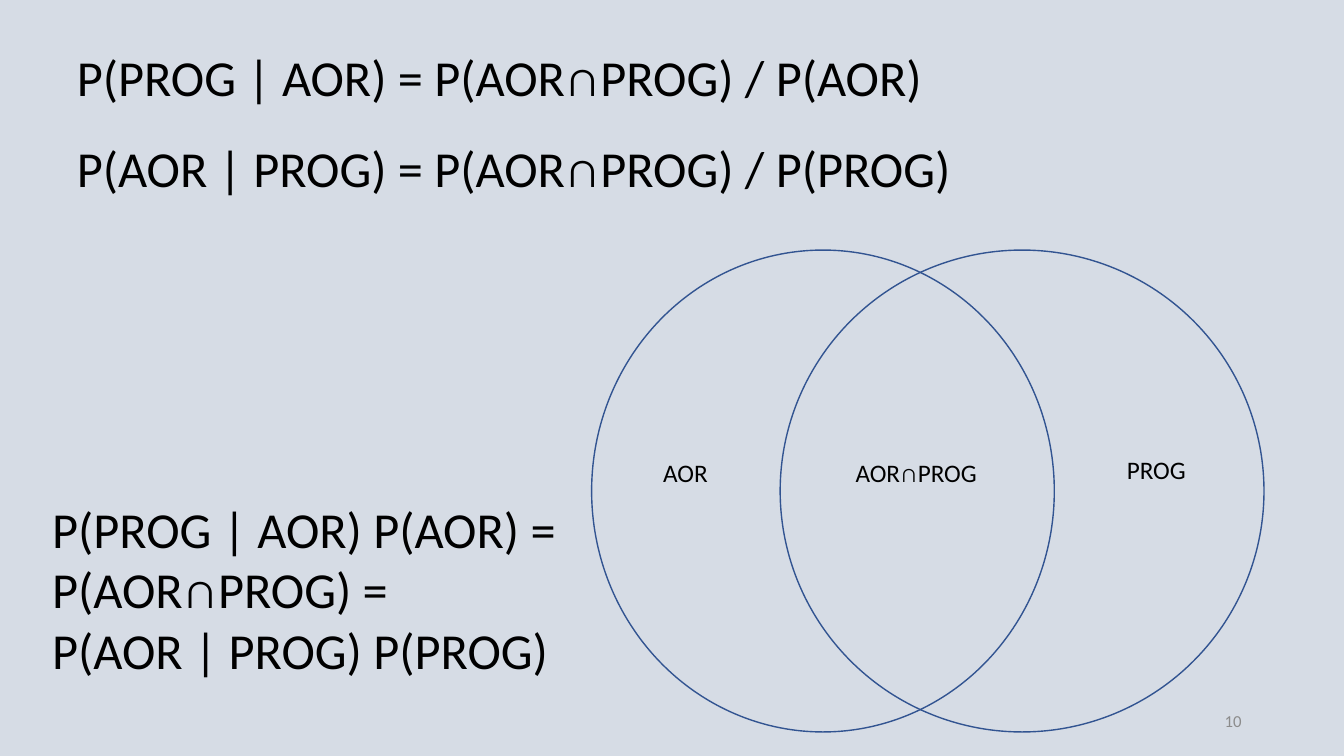
from pptx import Presentation
from pptx.dml.color import RGBColor
from pptx.enum.shapes import MSO_SHAPE
from pptx.enum.text import MSO_ANCHOR, PP_ALIGN
from pptx.util import Pt

BACKGROUND = RGBColor(0xD6, 0xDC, 0xE5)
OUTLINE = RGBColor(0x32, 0x54, 0x91)
BLACK = RGBColor(0x00, 0x00, 0x00)
GREY = RGBColor(0x8C, 0x8C, 0x8C)

FONT = "Calibri"
FORMULA_SIZE = 36
LABEL_SIZE = 18
LABEL_HEIGHT = 29
CIRCLE_TOP = 178.6
CIRCLE_HEIGHT = 344.2


def add_circle(slide, left, width):
    circle = slide.shapes.add_shape(
        MSO_SHAPE.OVAL, Pt(left), Pt(CIRCLE_TOP), Pt(width), Pt(CIRCLE_HEIGHT))
    circle.shadow.inherit = False
    circle.fill.background()
    circle.line.color.rgb = OUTLINE
    circle.line.width = Pt(1)


def add_text(slide, lines, left, top, width, height, size,
             color=BLACK, wrap=True, align=PP_ALIGN.LEFT, anchor=MSO_ANCHOR.TOP):
    frame = slide.shapes.add_textbox(
        Pt(left), Pt(top), Pt(width), Pt(height)).text_frame
    frame.word_wrap = wrap
    frame.vertical_anchor = anchor
    frame.text = "\n".join(lines)
    for paragraph in frame.paragraphs:
        paragraph.alignment = align
        paragraph.font.name = FONT
        paragraph.font.size = Pt(size)
        paragraph.font.color.rgb = color


def add_formula(slide, lines, left, top, width, height):
    add_text(slide, lines, left, top, width, height, FORMULA_SIZE, wrap=False)


def add_label(slide, label, left, top, width):
    add_text(slide, [label], left, top, width, LABEL_HEIGHT, LABEL_SIZE)


def main():
    presentation = Presentation()
    presentation.slide_width = Pt(960)
    presentation.slide_height = Pt(540)
    slide = presentation.slides.add_slide(presentation.slide_layouts[6])
    slide.background.fill.solid()
    slide.background.fill.fore_color.rgb = BACKGROUND

    add_circle(slide, 422.6, 330.5)
    add_circle(slide, 557.3, 345.6)
    add_label(slide, "AOR", 466.6, 323.3, 75)
    add_label(slide, "PROG", 797.8, 321.1, 88)
    add_label(slide, "AOR∩PROG", 604, 323.3, 145.5)

    add_formula(slide, ["P(PROG | AOR) = P(AOR∩PROG) / P(AOR)"],
                47.8, 29.5, 627, 51)
    add_formula(slide, ["P(AOR | PROG) = P(AOR∩PROG) / P(PROG)"],
                47.8, 94.3, 648, 51)
    add_formula(slide, ["P(PROG | AOR) P(AOR) =",
                        "P(AOR∩PROG) =",
                        "P(AOR | PROG) P(PROG)"],
                30.2, 352, 378, 138)

    add_text(slide, ["10"], 678, 500.5, 216, 28.8, 12, color=GREY,
             align=PP_ALIGN.RIGHT, anchor=MSO_ANCHOR.MIDDLE)
    presentation.save("out.pptx")


if __name__ == "__main__":
    main()
